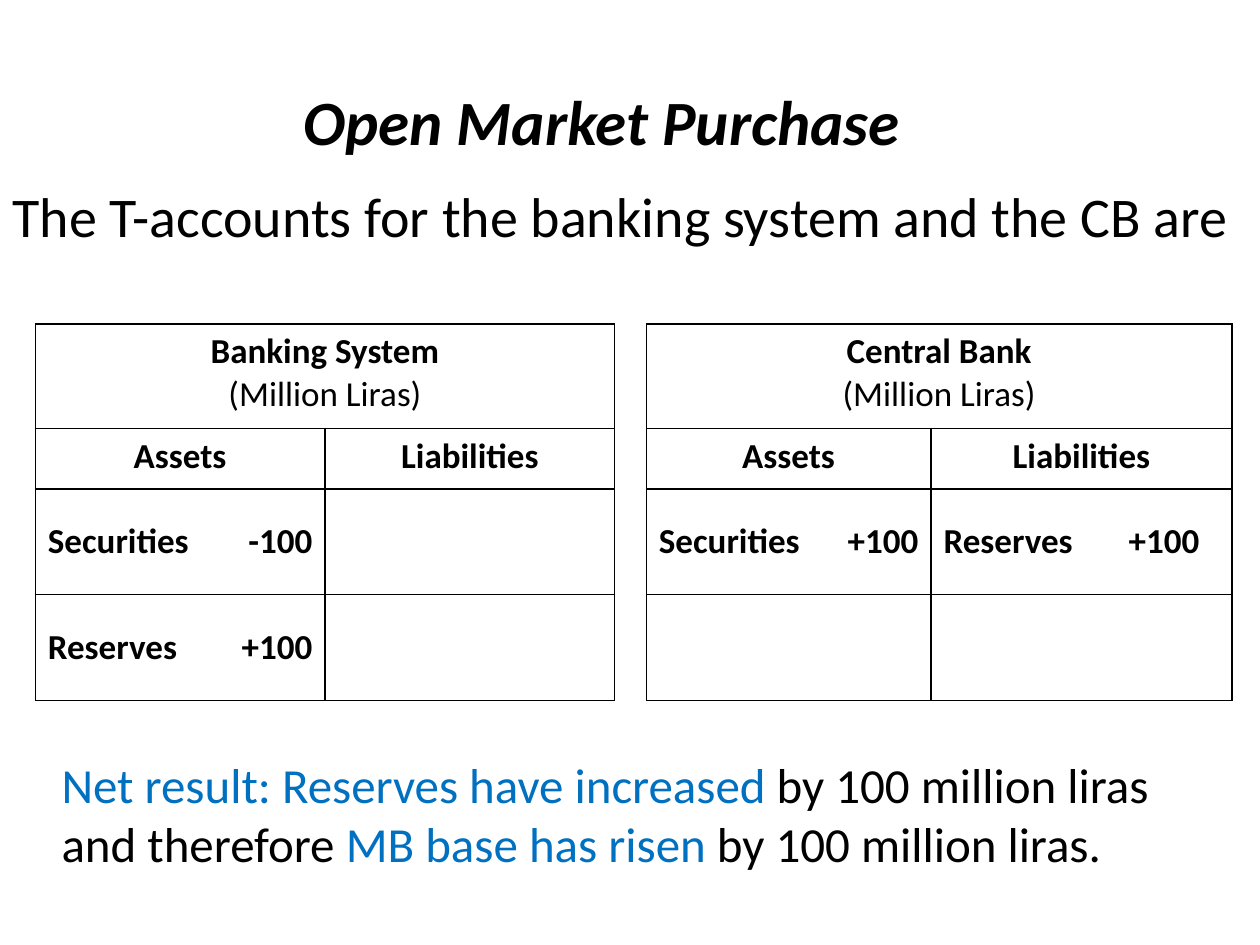
from lxml import etree
from pptx import Presentation
from pptx.dml.color import RGBColor
from pptx.enum.text import MSO_ANCHOR, PP_ALIGN
from pptx.oxml.ns import qn
from pptx.util import Inches, Pt

BLACK, BLUE = "000000", "0070C0"
WIDTHS = [1.38, 0.92, 1.47, 0.83, 0.25, 1.34, 0.92, 1.47, 0.92]
HEIGHTS = [0.83, 0.48, 0.84, 0.84]
GAP = 4
ACCOUNTS = [
    ("Banking System", 0, [["Securities", "-100", "", ""],
                           ["Reserves", "+100", "", ""]]),
    ("Central Bank", 5, [["Securities", "+100", "Reserves", "+100"],
                         ["", "", "", ""]]),
]


def color(code):
    return RGBColor.from_string(code)


def add_run(para, text, code=BLACK, **style):
    run = para.add_run()
    run.text = text
    for name, value in {"name": "Calibri", **style}.items():
        setattr(run.font, name, value)
    run.font.color.rgb = color(code)


def add_text(slide, box, runs, align, anchor=MSO_ANCHOR.MIDDLE, **style):
    frame = slide.shapes.add_textbox(*map(Inches, box)).text_frame
    frame.word_wrap = True
    frame.vertical_anchor = anchor
    para = frame.paragraphs[0]
    para.alignment = align
    for text, code in runs:
        add_run(para, text, code, **style)
    return para


def set_edges(cell, edges):
    """Draw the sides whose width in points is above zero and clear the others."""
    props = cell._tc.get_or_add_tcPr()
    for side in "LRTB":
        width = edges.get(side, 0)
        line = etree.SubElement(props, qn(f"a:ln{side}"), w=str(Pt(width)))
        if width:
            fill = etree.SubElement(line, qn("a:solidFill"))
            etree.SubElement(fill, qn("a:srgbClr"), val=BLACK)
        else:
            etree.SubElement(line, qn("a:noFill"))


def find_edges(row, col):
    """Give the side widths: heads are merged, entries are pairs of open cells."""
    if col == GAP:
        return {"L": 0.5, "R": 0.5}
    span = 4 if row == 0 else 2
    place = (col if col < GAP else col - GAP - 1) % span
    first, last = place == 0, place == span - 1
    merged = row < 2
    right = col + span - 1 if merged and first else col
    return {
        "L": first * (0.5 if col == GAP + 1 else 1),
        "R": (last or merged and first) * (0.5 if right == GAP - 1 else 1),
        "T": 1.5 if row == 2 else 1,
        "B": 1.5 if row == 1 else 1,
    }


def fill_cell(cell, lines, align):
    """Write (text, bold) lines into a cell."""
    frame = cell.text_frame
    for i, (text, bold) in enumerate(lines):
        para = frame.add_paragraph() if i else frame.paragraphs[0]
        para.alignment = align
        add_run(para, text, size=Pt(20), bold=bold)


def add_account(table, name, start, rows):
    head = table.cell(0, start)
    head.merge(table.cell(0, start + 3))
    fill_cell(head, [(name, True), ("(Million Liras)", False)], PP_ALIGN.CENTER)
    for i, label in enumerate(("Assets", "Liabilities")):
        cell = table.cell(1, start + 2 * i)
        cell.merge(table.cell(1, start + 2 * i + 1))
        fill_cell(cell, [(label, True)], PP_ALIGN.CENTER)
    for row, entries in enumerate(rows, 2):
        for i, text in enumerate(entries):
            cell = table.cell(row, start + i)
            cell.vertical_anchor = MSO_ANCHOR.MIDDLE
            if text:
                align = PP_ALIGN.RIGHT if i == 1 else PP_ALIGN.LEFT
                fill_cell(cell, [(text, True)], align)


def add_accounts(slide, box):
    shape = slide.shapes.add_table(len(HEIGHTS), len(WIDTHS), *map(Inches, box))
    table = shape.table
    table.first_row = table.horz_banding = False
    for col, width in zip(table.columns, WIDTHS):
        col.width = Inches(width)
    for row, height in zip(table.rows, HEIGHTS):
        row.height = Inches(height)
    for row in range(len(HEIGHTS)):
        for col in range(len(WIDTHS)):
            cell = table.cell(row, col)
            set_edges(cell, find_edges(row, col))
            cell.fill.background()
    table.cell(0, GAP).merge(table.cell(2, GAP))
    for account in ACCOUNTS:
        add_account(table, *account)


def add_result(slide, box):
    runs = [
        ("Net result: Reserves have increased ", BLUE),
        ("by 100 million liras and therefore ", BLACK),
        ("MB base has risen ", BLUE),
        ("by 100 million liras.", BLACK),
    ]
    para = add_text(slide, box, runs, PP_ALIGN.LEFT, MSO_ANCHOR.TOP, size=Pt(28))
    para._p.get_or_add_pPr().set("marL", str(Inches(0.19)))


def main():
    deck = Presentation()
    deck.slide_width, deck.slide_height = Inches(10), Inches(7.5)
    slide = deck.slides.add_slide(deck.slide_layouts[6])
    add_text(slide, (0.33, 0.52, 9, 0.87), [("Open Market Purchase ", BLACK)],
             PP_ALIGN.CENTER, size=Pt(36), bold=True, italic=True)
    add_result(slide, (0.2, 5.94, 9.61, 1.56))
    add_accounts(slide, (0.28, 2.57, sum(WIDTHS), sum(HEIGHTS)))
    add_text(slide, (0, 1.39, 10, 0.64),
             [("The T-accounts for the banking system and the CB are ", BLACK)],
             PP_ALIGN.JUSTIFY, size=Pt(32))
    deck.save("out.pptx")


if __name__ == "__main__":
    main()
